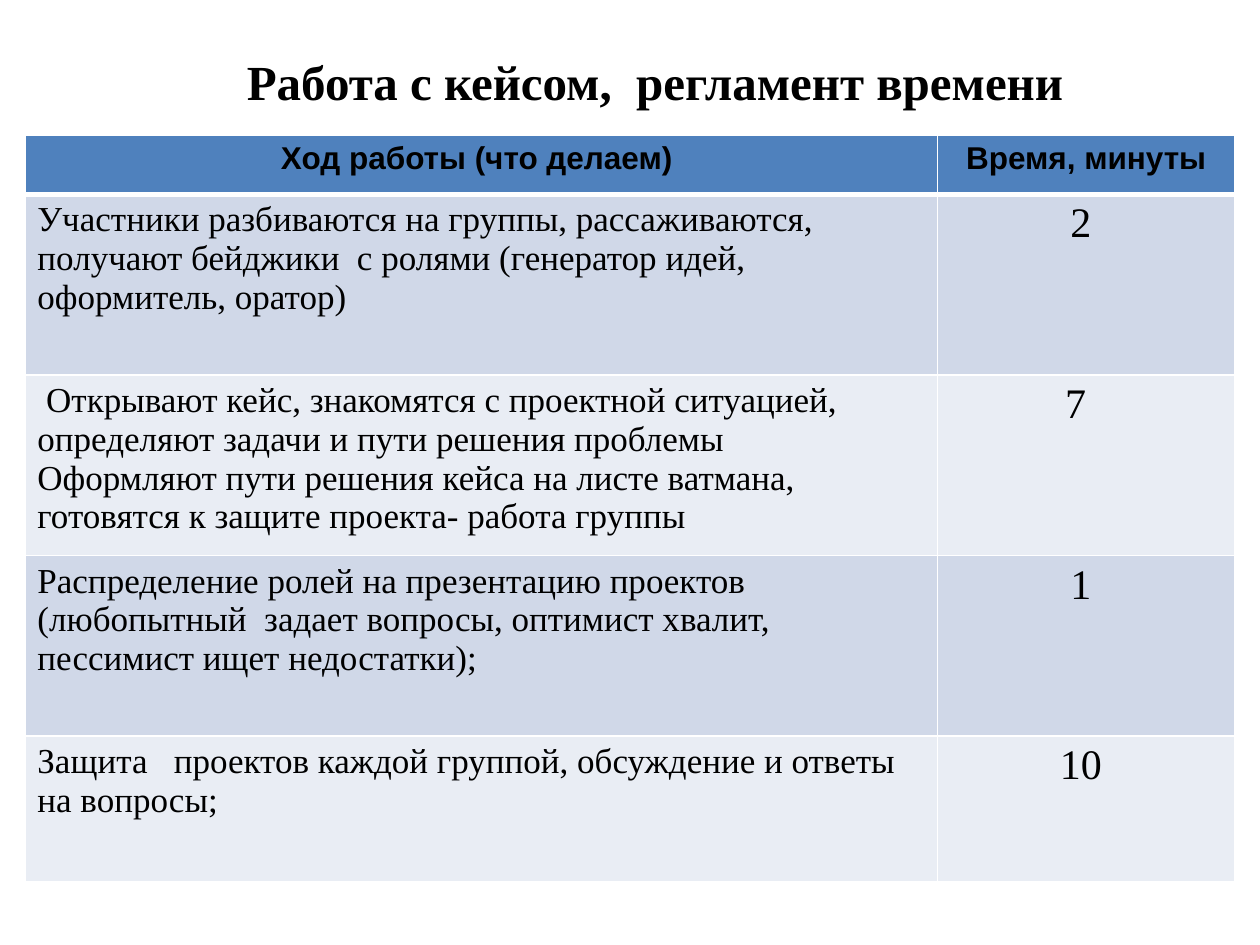
from lxml import etree
from pptx import Presentation
from pptx.dml.color import RGBColor
from pptx.enum.text import PP_ALIGN as AL
from pptx.oxml.ns import qn
from pptx.util import Pt

COLORS = {"text": "000000", "border": "FFFFFF", "header": "4F81BD",
          "odd": "D0D8E8", "even": "E9EDF4"}
SERIF = "Times New Roman"
TITLE = {"name": SERIF, "size": Pt(28), "bold": True}
HEADER = {"name": "Arial", "size": Pt(18), "bold": True}
STEP = {"name": SERIF, "size": Pt(20), "bold": False}
MINUTES = {"name": SERIF, "size": Pt(24), "bold": False}

ROWS = [
    (["Ход работы (что делаем) "], "Время, минуты"),
    (["Участники разбиваются на группы, рассаживаются, получают бейджики  "
      "с ролями (генератор идей, оформитель, оратор)"], "2 "),
    ([" Открывают кейс, знакомятся с проектной ситуацией, определяют задачи "
      "и пути решения проблемы",
      "Оформляют пути решения кейса на листе ватмана, готовятся к защите "
      "проекта- работа группы"], "7  "),
    (["Распределение ролей на презентацию проектов (любопытный  задает "
      "вопросы, оптимист хвалит, пессимист ищет недостатки);"], "1 "),
    (["Защита   проектов каждой группой, обсуждение и ответы на вопросы;"],
     "10 "),
]
COL_WIDTHS = [521.5, 170]
ROW_HEIGHTS = [33.8, 103.2, 103.2, 103.2, 83.5]


def write(tf, lines, fmt, align):
    """Fill a text frame with one paragraph per line."""
    for i, line in enumerate(lines):
        p = tf.add_paragraph() if i else tf.paragraphs[0]
        p.alignment = align
        r = p.add_run()
        r.text = line
        for name, value in fmt.items():
            setattr(r.font, name, value)
        r.font.color.rgb = RGBColor.from_string(COLORS["text"])


def add_border(cell, side, width):
    ln = etree.SubElement(cell._tc.get_or_add_tcPr(), qn(f"a:ln{side}"),
                          w=str(Pt(width)))
    fill = etree.SubElement(ln, qn("a:solidFill"))
    etree.SubElement(fill, qn("a:srgbClr"), val=COLORS["border"])


prs = Presentation()
prs.slide_width, prs.slide_height = Pt(720), Pt(540)
s = prs.slides.add_slide(prs.slide_layouts[6])

title = s.shapes.add_textbox(Pt(48.2), Pt(25.9), Pt(652.3), Pt(41))
title.text_frame.word_wrap = True
write(title.text_frame, ["Работа с кейсом,  регламент времени"], TITLE, AL.CENTER)

table = s.shapes.add_table(len(ROWS), len(COL_WIDTHS), Pt(14.2), Pt(77.2),
                           Pt(sum(COL_WIDTHS)), Pt(sum(ROW_HEIGHTS))).table
for col, width in zip(table.columns, COL_WIDTHS):
    col.width = Pt(width)
for row, height in zip(table.rows, ROW_HEIGHTS):
    row.height = Pt(height)

for i, (steps, minutes) in enumerate(ROWS):
    band = "header" if i == 0 else "odd" if i % 2 else "even"
    widths = {"L": 1, "R": 1, "T": 3 if i == 1 else 1, "B": 3 if i == 0 else 1}
    step_cell, minutes_cell = table.rows[i].cells
    write(step_cell.text_frame, steps, STEP if i else HEADER,
          AL.LEFT if i else AL.CENTER)
    write(minutes_cell.text_frame, [minutes], MINUTES if i else HEADER, AL.CENTER)
    for cell in (step_cell, minutes_cell):
        for side, width in widths.items():
            add_border(cell, side, width)
        cell.fill.solid()
        cell.fill.fore_color.rgb = RGBColor.from_string(COLORS[band])

prs.save("out.pptx")
